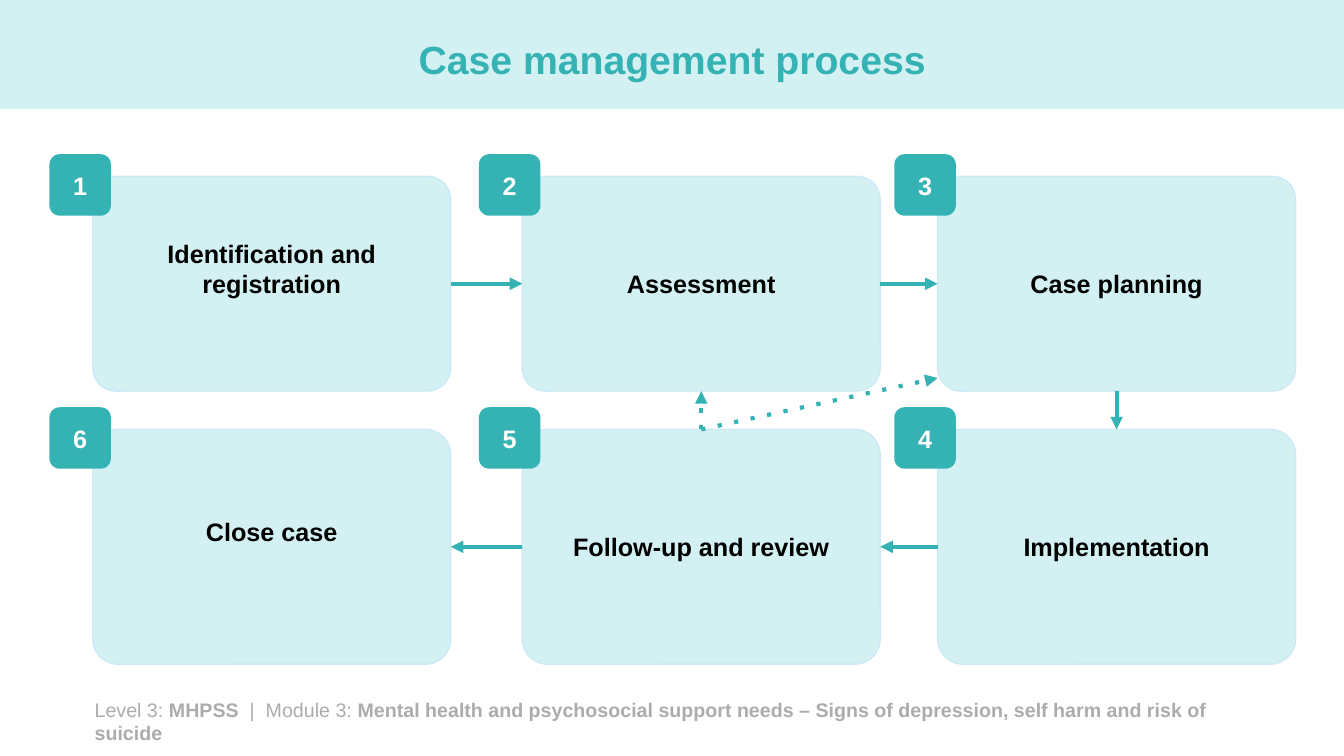
from lxml.etree import SubElement
from pptx import Presentation
from pptx.dml.color import RGBColor
from pptx.enum.shapes import MSO_CONNECTOR, MSO_SHAPE
from pptx.enum.text import MSO_ANCHOR as Anchor, PP_ALIGN as Align
from pptx.oxml.ns import qn
from pptx.util import Inches, Pt

TEAL = RGBColor(0x35, 0xB2, 0xB4)
PALE_TEAL = RGBColor(0xD3, 0xF1, 0xF2)
PALE_BLUE = RGBColor(0xCC, 0xE9, 0xF8)
GREY = RGBColor(0xAE, 0xAB, 0xAB)
BLACK = RGBColor(0, 0, 0)
WHITE = RGBColor(255, 255, 255)

TITLE = "Case management process"
FOOTER = [
    ("Level 3: ", False),
    ("MHPSS", True),
    ("  |  Module 3: ", False),
    ("Mental health and psychosocial support needs – Signs of depression, "
     "self harm and risk of suicide", True),
]
# Step number: (label, column, row, bottom margin of the text)
STEPS = {
    1: ("Identification and registration", 0, 0, 0.35),
    2: ("Assessment", 1, 0, 0.05),
    3: ("Case planning", 2, 0, 0.05),
    4: ("Implementation", 2, 1, 0.05),
    5: ("Follow-up and review", 1, 1, 0.05),
    6: ("Close case", 0, 1, 0.35),
}
TOP, LEFT, BOTTOM, RIGHT = range(4)
# (from step, side, to step, side, dash)
ARROWS = [
    (1, RIGHT, 2, LEFT, "solid"),
    (2, RIGHT, 3, LEFT, "solid"),
    (3, BOTTOM, 4, TOP, "solid"),
    (4, LEFT, 5, RIGHT, "solid"),
    (5, LEFT, 6, RIGHT, "solid"),
    (5, TOP, 2, BOTTOM, "dot"),
    (5, TOP, 3, None, "dot"),
]

SLIDE_WIDTH, SLIDE_HEIGHT = 13.33, 7.5
COLUMN_LEFTS = (0.92, 5.18, 9.3)
ROWS = ((1.75, 2.13), (4.26, 2.33))  # top, height
BOX_WIDTH = 3.55
BADGE_SIZE = 0.61
BADGE_OFFSET_X, BADGE_OFFSET_Y = 0.43, 0.22
REVISED_PLAN_POINT = (9.3, 3.75)


def write(shape, runs, size, color, align=Align.CENTER, anchor=Anchor.MIDDLE, bottom=0.05):
    """Fill the shape's single paragraph with (text, bold) runs."""
    frame = shape.text_frame
    frame.word_wrap = True
    frame.vertical_anchor = anchor
    frame.margin_bottom = Inches(bottom)
    paragraph = frame.paragraphs[0]
    paragraph.alignment = align
    for text, bold in runs:
        run = paragraph.add_run()
        run.text = text
        run.font.color.rgb = color
        for name, value in {"name": "Arial", "size": Pt(size), "bold": bold}.items():
            setattr(run.font, name, value)
    return paragraph


def add_block(slide, kind, box, fill, outline=None, corner=None):
    shape = slide.shapes.add_shape(kind, *map(Inches, box))
    shape.shadow.inherit = False
    shape.fill.solid()
    shape.fill.fore_color.rgb = fill
    if outline is None:
        shape.line.fill.background()
    else:
        shape.line.color.rgb = outline
        shape.line.width = Pt(1)
    if corner is not None:
        shape.adjustments[0] = corner
    return shape


def add_step(slide, number, label, column, row, bottom):
    left = COLUMN_LEFTS[column]
    top, height = ROWS[row]
    box = add_block(slide, MSO_SHAPE.ROUNDED_RECTANGLE, (left, top, BOX_WIDTH, height),
                    PALE_TEAL, PALE_BLUE, 0.108)
    write(box, [(label, True)], 18, BLACK, bottom=bottom)
    badge = add_block(slide, MSO_SHAPE.ROUNDED_RECTANGLE,
                      (left - BADGE_OFFSET_X, top - BADGE_OFFSET_Y, BADGE_SIZE, BADGE_SIZE),
                      TEAL, corner=0.167)
    write(badge, [(str(number), True)], 18, WHITE)
    return box


def add_arrow(slide, start, start_side, end, end_side, dash):
    """Join two boxes; without an end side, stop at the revised plan point."""
    target = tuple(map(Inches, REVISED_PLAN_POINT))
    connector = slide.shapes.add_connector(MSO_CONNECTOR.STRAIGHT, 0, 0, *target)
    connector.begin_connect(start, start_side)
    if end_side is not None:
        connector.end_connect(end, end_side)
    connector.line.color.rgb = TEAL
    connector.line.width = Pt(3)
    properties = connector._element.spPr
    line = properties.find(qn("a:ln"))
    SubElement(line, qn("a:prstDash"), val=dash)
    SubElement(line, qn("a:tailEnd"), type="triangle")
    SubElement(properties, qn("a:effectLst"))


def main():
    presentation = Presentation()
    presentation.slide_width = Inches(SLIDE_WIDTH)
    presentation.slide_height = Inches(SLIDE_HEIGHT)
    slide = presentation.slides.add_slide(presentation.slide_layouts[6])

    add_block(slide, MSO_SHAPE.RECTANGLE, (0, 0, SLIDE_WIDTH, 1.08), PALE_TEAL)
    footer = slide.shapes.add_textbox(*map(Inches, (0.84, 6.87, 11.35, 0.57)))
    write(footer, FOOTER, 14, GREY, Align.LEFT, Anchor.TOP)
    title = slide.shapes.add_textbox(*map(Inches, (0.24, 0.14, 12.85, 0.95)))
    write(title, [(TITLE, True)], 28, TEAL).line_spacing = 0.9

    boxes = {number: add_step(slide, number, *step) for number, step in STEPS.items()}
    for start, start_side, end, end_side, dash in ARROWS:
        add_arrow(slide, boxes[start], start_side, boxes[end], end_side, dash)

    presentation.save("out.pptx")


if __name__ == "__main__":
    main()
